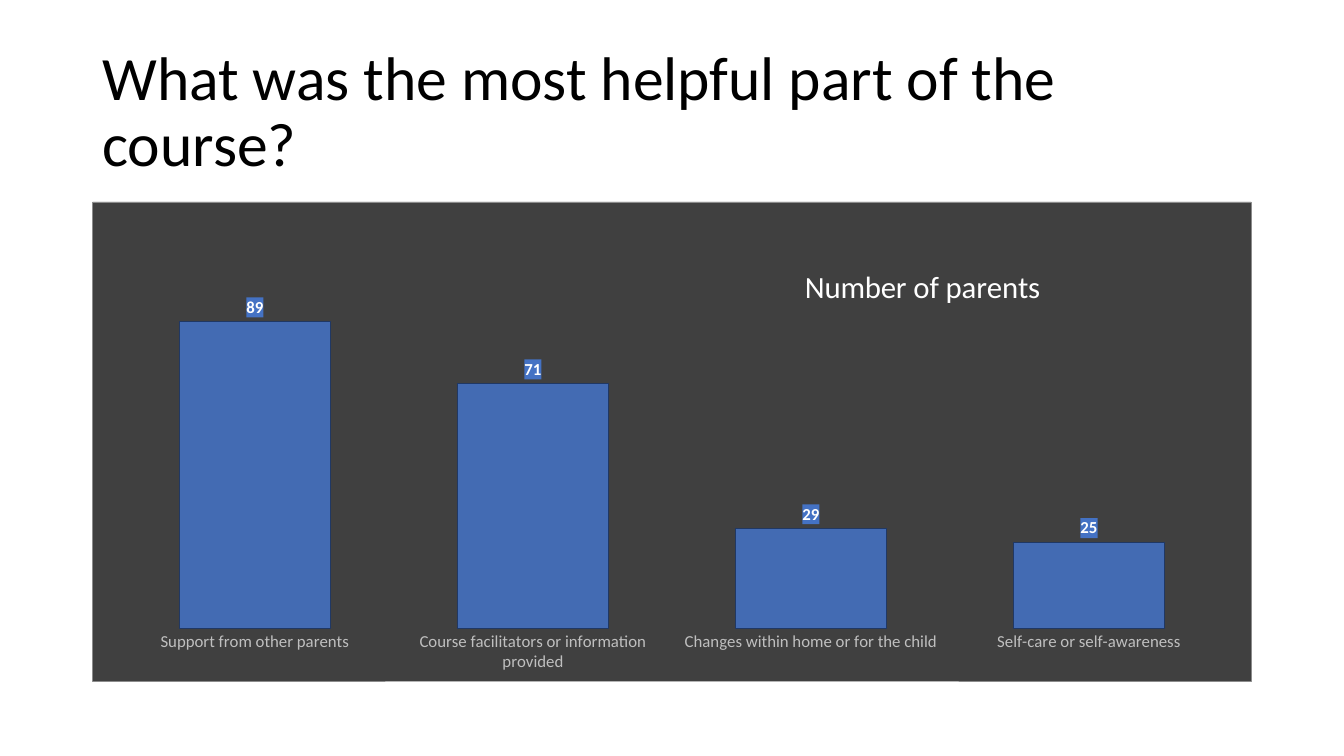
from lxml import etree
from pptx import Presentation
from pptx.chart.data import CategoryChartData
from pptx.dml.color import RGBColor
from pptx.enum.chart import XL_CHART_TYPE, XL_LABEL_POSITION, XL_TICK_MARK
from pptx.enum.text import MSO_ANCHOR
from pptx.oxml import parse_xml
from pptx.oxml.ns import nsdecls, qn
from pptx.util import Pt

COLORS = {
    "title": "000000",
    "panel": "404040",
    "border": "8C8C8C",
    "bar": "4472C4",
    "bar_line": "203864",
    "category": "BFBFBF",
    "light": "FFFFFF",
}
HEADING = "What was the most helpful part of the course?"
SERIES_NAME = "Number of parents"
ANSWERS = {
    "Support from other parents": 89,
    "Course facilitators or information provided": 71,
    "Changes within home or for the child": 29,
    "Self-care or self-awareness": 25,
}


def style_font(font, size, color, bold=False):
    values = {"name": "Calibri", "size": Pt(size), "bold": bold}
    for name, value in values.items():
        setattr(font, name, value)
    font.color.rgb = RGBColor.from_string(COLORS[color])


def place(element, index, **fractions):
    """Give a chart part a manual layout, in fractions of the chart."""
    for old in element.findall(qn("c:layout")):
        element.remove(old)
    layout = etree.Element(qn("c:layout"))
    manual = etree.SubElement(layout, qn("c:manualLayout"))
    for name, value in fractions.items():
        etree.SubElement(manual, qn(f"c:{name}")).set("val", str(value))
    element.insert(index, layout)


deck = Presentation()
deck.slide_width, deck.slide_height = Pt(960), Pt(540)
page = deck.slides.add_slide(deck.slide_layouts[6])

# Heading
box = page.shapes.add_textbox(Pt(66), Pt(28.75), Pt(828), Pt(104.4))
box.text_frame.word_wrap = True
box.text_frame.vertical_anchor = MSO_ANCHOR.MIDDLE
para = box.text_frame.paragraphs[0]
para.line_spacing = 0.9
span = para.add_run()
span.text = HEADING
style_font(span.font, 44, "title")

# Chart
data = CategoryChartData()
data.categories = list(ANSWERS)
data.add_series(SERIES_NAME, list(ANSWERS.values()))
chart = page.shapes.add_chart(
    XL_CHART_TYPE.COLUMN_CLUSTERED, Pt(66), Pt(144), Pt(828), Pt(342.7), data
).chart
chart.has_legend = False
style_font(chart.font, 10, "title")
chart_space = chart.element
chart_space.find(qn("c:chart")).addnext(parse_xml(
    f'<c:spPr {nsdecls("c", "a")}>'
    f'<a:solidFill><a:srgbClr val="{COLORS["panel"]}"/></a:solidFill>'
    f'<a:ln w="{Pt(0.5)}"><a:solidFill><a:srgbClr val="{COLORS["border"]}"/>'
    '</a:solidFill></a:ln></c:spPr>'
))

# Chart title
chart.has_title = True
title = chart.chart_title
title.include_in_layout = False
title.text_frame.text = SERIES_NAME
style_font(title.text_frame.paragraphs[0].runs[0].font, 22, "light")
place(title._element, 1, xMode="edge", yMode="edge", x=0.61, y=0.12)

# Axes
category_axis = chart.category_axis
category_axis.major_tick_mark = XL_TICK_MARK.NONE
category_axis.format.line.fill.background()
style_font(category_axis.tick_labels.font, 12, "category")
value_axis = chart.value_axis
axis_values = {
    "minimum_scale": 0,
    "maximum_scale": 100,
    "has_major_gridlines": False,
    "visible": False,
}
for name, value in axis_values.items():
    setattr(value_axis, name, value)
place(chart_space.find(f".//{qn('c:plotArea')}"), 0, layoutTarget="inner",
      xMode="edge", yMode="edge", x=0.02, y=0.17, w=0.96, h=0.72)

# Bars
plot = chart.plots[0]
plot.gap_width = 84
plot.vary_by_categories = False
bars = plot.series[0]
bars.format.fill.solid()
bars.format.fill.fore_color.rgb = RGBColor.from_string(COLORS["bar"])
bar_color = bars._element.find(f"{qn('c:spPr')}/{qn('a:solidFill')}/{qn('a:srgbClr')}")
etree.SubElement(bar_color, qn("a:alpha")).set("val", "88000")
bars.format.line.width = Pt(0.75)
bars.format.line.color.rgb = RGBColor.from_string(COLORS["bar_line"])

# Value labels
labels = bars.data_labels
labels.show_value = True
labels.position = XL_LABEL_POSITION.OUTSIDE_END
style_font(labels.font, 12, "light", bold=True)
labels._element.find(qn("c:txPr")).addprevious(parse_xml(
    f'<c:spPr {nsdecls("c", "a")}><a:solidFill>'
    f'<a:srgbClr val="{COLORS["bar"]}"/></a:solidFill></c:spPr>'
))

deck.save("out.pptx")
